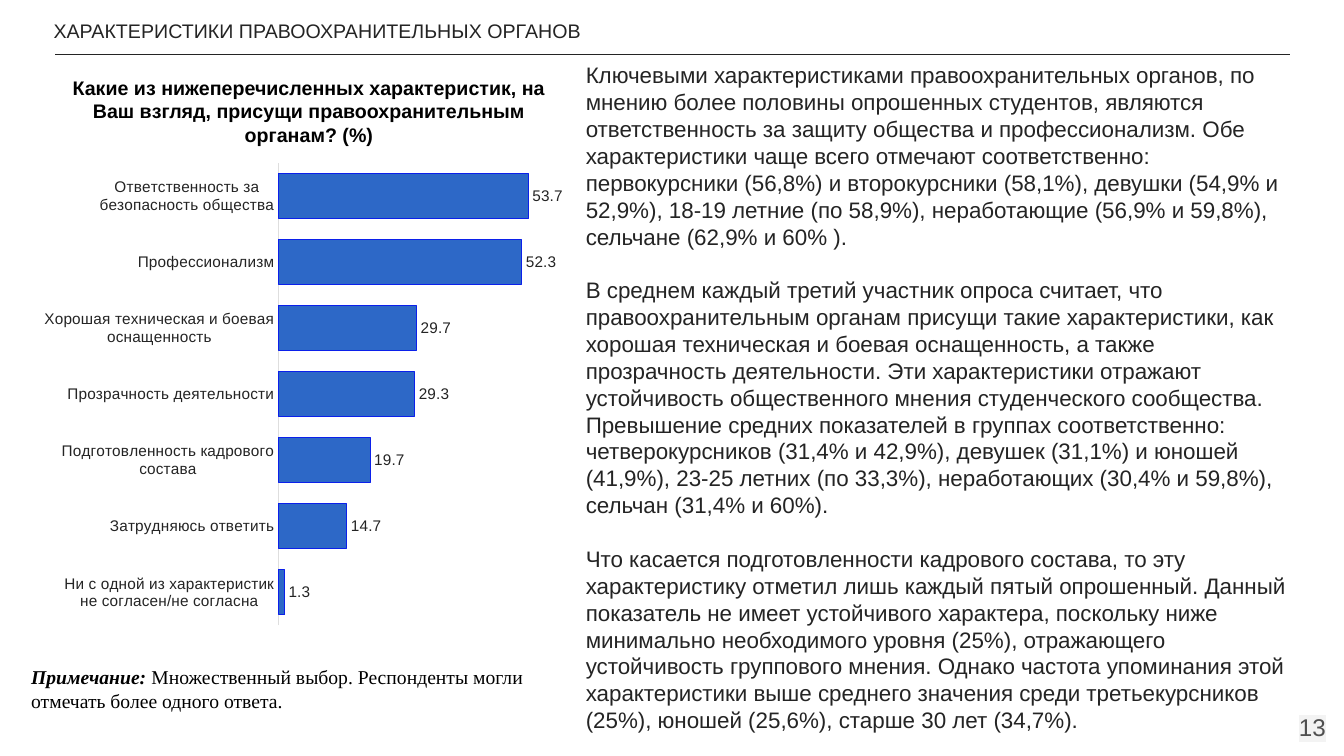
from dataclasses import dataclass

from lxml.etree import SubElement
from pptx import Presentation
from pptx.chart.data import CategoryChartData
from pptx.dml.color import RGBColor
from pptx.enum.chart import XL_CHART_TYPE, XL_LABEL_POSITION, XL_TICK_MARK
from pptx.enum.shapes import MSO_CONNECTOR
from pptx.enum.text import MSO_ANCHOR, MSO_AUTO_SIZE, PP_ALIGN
from pptx.oxml.ns import qn
from pptx.util import Inches, Pt

HEADING = "ХАРАКТЕРИСТИКИ ПРАВООХРАНИТЕЛЬНЫХ ОРГАНОВ"
QUESTION = ("Какие из нижеперечисленных характеристик, на Ваш взгляд, "
            "присущи правоохранительным органам? (%)")
FINDINGS = [
    "Ключевыми характеристиками правоохранительных органов, по мнению более "
    "половины опрошенных студентов, являются ответственность за защиту общества "
    "и профессионализм. Обе характеристики чаще всего отмечают соответственно: "
    "первокурсники (56,8%) и второкурсники (58,1%), девушки (54,9% и 52,9%), "
    "18-19 летние (по 58,9%), неработающие (56,9% и 59,8%), "
    "сельчане (62,9% и 60% ).",
    "В среднем каждый третий участник опроса считает, что правоохранительным "
    "органам присущи такие характеристики, как хорошая техническая и боевая "
    "оснащенность, а также прозрачность деятельности. Эти характеристики отражают "
    "устойчивость общественного мнения студенческого сообщества. Превышение "
    "средних показателей в группах соответственно: четверокурсников (31,4% и "
    "42,9%), девушек (31,1%) и юношей (41,9%), 23-25 летних (по 33,3%), "
    "неработающих (30,4% и 59,8%), сельчан (31,4% и 60%).",
    "Что касается подготовленности кадрового состава, то эту характеристику "
    "отметил лишь каждый пятый опрошенный. Данный показатель не имеет устойчивого "
    "характера, поскольку ниже минимально необходимого уровня (25%), отражающего "
    "устойчивость группового мнения. Однако частота упоминания этой характеристики "
    "выше среднего значения среди третьекурсников (25%), юношей (25,6%), "
    "старше 30 лет (34,7%).",
]
NOTE = ("Примечание: ",
        "Множественный выбор. Респонденты могли отмечать более одного ответа.")
PAGE = "13"
ANSWERS = [
    ("Ни с одной из характеристик не согласен/не согласна", 1.3),
    ("Затрудняюсь ответить", 14.7),
    ("Подготовленность кадрового состава", 19.7),
    ("Прозрачность деятельности", 29.3),
    ("Хорошая техническая и боевая оснащенность", 29.7),
    ("Профессионализм", 52.3),
    ("Ответственность за безопасность общества", 53.7),
]

BOXES = {
    "heading": (1.58, 1.73, 55.14, 4.53),
    "question": (3.3, 6.4, 39.38, 13.73),
    "chart": (3.3, 20.27, 39.38, 63.73),
    "note": (1.58, 87.33, 41.04, 7.6),
    "findings": (42.61, 6.4, 54.99, 91.87),
    "page": (93.62, 92.4, 6, 7.6),
}
RULE = (4.13, 7.2, 95.95, 7.2)
PLOT = {"x": 0.44, "y": 0.02, "w": 0.53, "h": 0.96}


@dataclass(frozen=True)
class Theme:
    sans: str = "Arial"
    serif: str = "Times New Roman"
    ink: str = "242424"
    black: str = "000000"
    page: str = "505050"
    page_back: str = "F3F3F3"
    bar: str = "2D68C7"
    bar_edge: str = "0B20EA"
    axis: str = "DEDEDE"
    body_size: float = 16
    head_size: float = 14
    page_size: float = 17.3
    chart_size: float = 11
    leading: float = 1.2
    hairline: float = 0.75


T = Theme()
prs = Presentation()
prs.slide_width, prs.slide_height = Inches(13.33), Inches(7.5)
s = prs.slides.add_slide(prs.slide_layouts[5])


def place(shares):
    sides = (prs.slide_width, prs.slide_height) * 2
    return [round(side * share / 100) for side, share in zip(sides, shares)]


def set_font(font, size, color, name=T.sans, bold=False):
    font.size, font.name, font.bold = Pt(size), name, bold
    font.color.rgb = RGBColor.from_string(color)


def set_line(line, color):
    line.color.rgb = RGBColor.from_string(color)
    line.width = Pt(T.hairline)


def write(key, paragraphs, size, color, name=T.sans, bold=False, sp=None,
          align=PP_ALIGN.LEFT, anchor=MSO_ANCHOR.TOP, insets=(0.1, 0.05, 0.1, 0.05)):
    box = place(BOXES[key])
    sp = sp or s.shapes.add_textbox(*box)
    sp.left, sp.top, sp.width, sp.height = box
    tf = sp.text_frame
    tf.word_wrap, tf.auto_size, tf.vertical_anchor = True, MSO_AUTO_SIZE.NONE, anchor
    tf.margin_left, tf.margin_top, tf.margin_right, tf.margin_bottom = map(Inches, insets)
    for i, runs in enumerate(paragraphs):
        p = tf.add_paragraph() if i else tf.paragraphs[0]
        p.alignment, p.line_spacing = align, Pt(size * T.leading)
        p.space_before = Pt(size * T.leading if i else 0)
        set_font(p.font, size, color, name, bold)
        for text in runs:
            p.add_run().text = text
    return tf


def add_answers_chart():
    data = CategoryChartData()
    data.categories = [answer for answer, _ in ANSWERS]
    data.add_series("Series 1", [value for _, value in ANSWERS])
    chart = s.shapes.add_chart(XL_CHART_TYPE.BAR_CLUSTERED, *place(BOXES["chart"]), data).chart
    chart.has_legend = chart.has_title = False
    set_font(chart.font, T.chart_size, T.ink)

    cat = chart.category_axis
    cat.major_tick_mark = cat.minor_tick_mark = XL_TICK_MARK.NONE
    set_font(cat.tick_labels.font, T.chart_size, T.ink)
    set_line(cat.format.line, T.axis)
    val = chart.value_axis
    val.visible = val.has_major_gridlines = False
    val.minimum_scale, val.maximum_scale = 0, 60

    plot = chart.plots[0]
    plot.gap_width, plot.vary_by_categories = 48, False
    plot.has_data_labels = True
    labels = plot.data_labels
    labels.show_value, labels.position = True, XL_LABEL_POSITION.OUTSIDE_END
    set_font(labels.font, T.chart_size, T.ink)
    bars = plot.series[0].format
    bars.fill.solid()
    bars.fill.fore_color.rgb = RGBColor.from_string(T.bar)
    set_line(bars.line, T.bar_edge)

    area = chart.element.find(".//" + qn("c:plotArea"))
    layout = area.find(qn("c:layout"))
    if layout is None:
        layout = SubElement(area, qn("c:layout"))
        area.insert(0, layout)
    manual = SubElement(layout, qn("c:manualLayout"))
    settings = {"layoutTarget": "inner", "xMode": "edge", "yMode": "edge", **PLOT}
    for tag, value in settings.items():
        SubElement(manual, qn("c:" + tag)).set("val", str(value))


rule = s.shapes.add_connector(MSO_CONNECTOR.STRAIGHT, *place(RULE))
set_line(rule.line, T.ink)
SubElement(rule.element.spPr, qn("a:effectLst"))

write("heading", [[HEADING]], T.head_size, T.ink, sp=s.shapes.title,
      anchor=MSO_ANCHOR.MIDDLE, insets=(0.32, 0.05, 0.1, 0.05))
write("question", [[QUESTION]], T.head_size, T.black, bold=True,
      align=PP_ALIGN.CENTER, insets=(0.1, 0.27, 0.1, 0.05))
add_answers_chart()
note = write("note", [NOTE], T.head_size, T.black, name=T.serif)
lead = note.paragraphs[0].runs[0].font
lead.bold = lead.italic = True
write("findings", [[text] for text in FINDINGS], T.body_size, T.ink, insets=(0.13,) * 4)
page = write("page", [[PAGE]], T.page_size, T.page, align=PP_ALIGN.RIGHT,
             anchor=MSO_ANCHOR.MIDDLE, insets=(0.13,) * 4)
r = page.paragraphs[0].runs[0]
highlight = SubElement(r.font._element, qn("a:highlight"))
SubElement(highlight, qn("a:srgbClr")).set("val", T.page_back)

prs.save("out.pptx")
